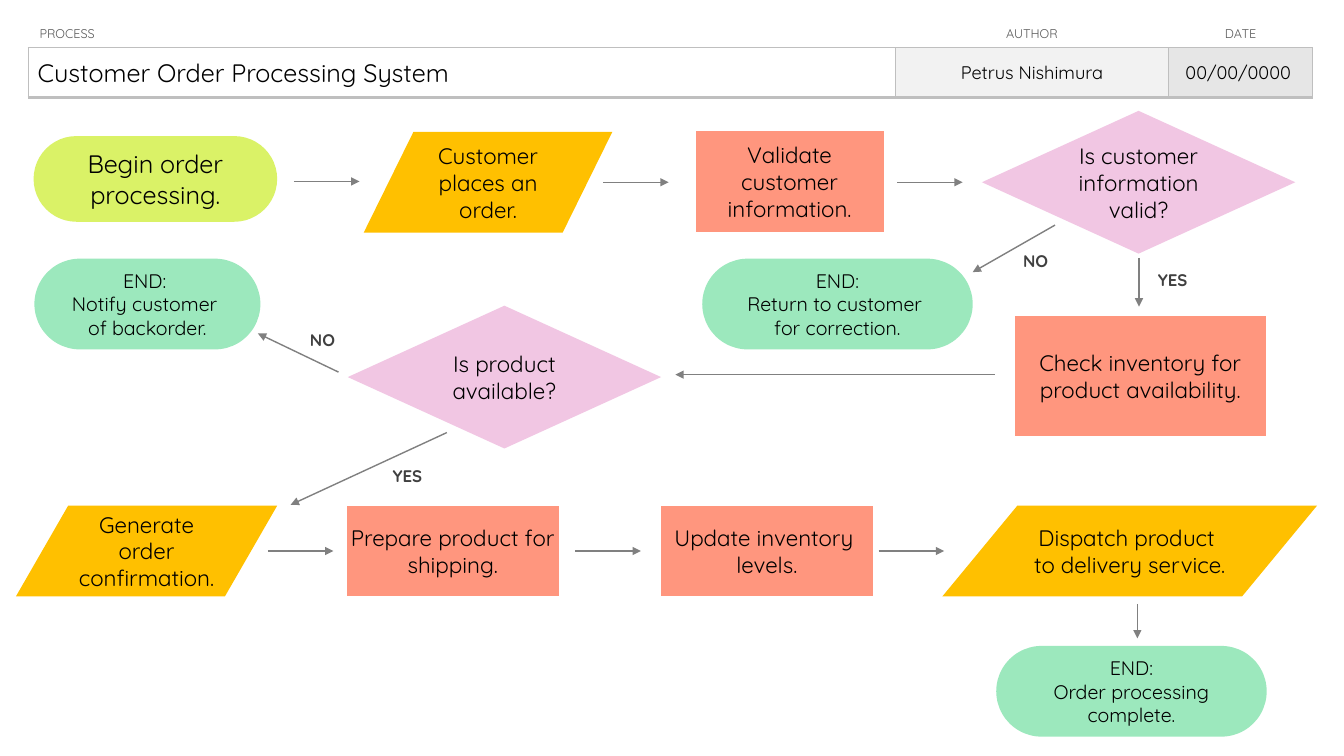
from lxml.etree import SubElement
from pptx import Presentation
from pptx.dml.color import RGBColor
from pptx.enum.shapes import MSO_CONNECTOR as Link, MSO_SHAPE as Shape
from pptx.enum.text import MSO_ANCHOR as Anchor, PP_ALIGN as Align
from pptx.oxml.ns import qn
from pptx.util import Inches, Pt

BLACK = RGBColor(0x00, 0x00, 0x00)
WHITE = RGBColor(0xFF, 0xFF, 0xFF)
HEADING = RGBColor(0x59, 0x59, 0x59)
LABEL = RGBColor(0x40, 0x40, 0x40)
ARROW = RGBColor(0x80, 0x80, 0x80)
BORDER = RGBColor(0xBF, 0xBF, 0xBF)
AUTHOR_FILL = RGBColor(0xF2, 0xF2, 0xF2)
DATE_FILL = RGBColor(0xE6, 0xE6, 0xE6)
LIME = RGBColor(0xDA, 0xF2, 0x67)
MINT = RGBColor(0x9C, 0xE8, 0xBD)
AMBER = RGBColor(0xFF, 0xC0, 0x00)
CORAL = RGBColor(0xFF, 0x96, 0x7E)
PINK = RGBColor(0xF1, 0xC6, 0xE3)

deck = Presentation()
deck.slide_width, deck.slide_height = Inches(13.333), Inches(7.5)
page = deck.slides.add_slide(deck.slide_layouts[6])
UNIT = deck.slide_width / 160


def grid(*cells):
    return [round(cell * UNIT) for cell in cells]


def write(frame, lines, size, color=BLACK, bold=False, align=Align.CENTER):
    for number, line in enumerate(lines):
        para = frame.paragraphs[0] if number == 0 else frame.add_paragraph()
        para.alignment = align
        span = para.add_run()
        span.text = line
        span.font.color.rgb = color
        look = {"name": "Quicksand", "size": Pt(size), "bold": bold}
        for name, value in look.items():
            setattr(span.font, name, value)


header = page.shapes.add_table(2, 3, *grid(3.4, 2.3, 152.9, 9.3)).table
for flag in ("first_row", "horz_banding"):
    setattr(header, flag, False)
for column, width in zip(header.columns, grid(103.2, 32.5, 17.2)):
    column.width = width
for row, height in zip(header.rows, grid(3.4, 5.9)):
    row.height = height

HEADER_CELLS = [
    (0, 0, "PROCESS", 9, HEADING, None, 0.11, Align.LEFT),
    (0, 1, "AUTHOR", 9, HEADING, None, 0.01, Align.CENTER),
    (0, 2, "DATE", 9, HEADING, None, 0.01, Align.CENTER),
    (1, 0, "Customer Order Processing System", 18, BLACK, WHITE, 0.09, Align.LEFT),
    (1, 1, "Petrus Nishimura", 13, BLACK, AUTHOR_FILL, 0.01, Align.CENTER),
    (1, 2, "00/00/0000 ", 13, BLACK, DATE_FILL, 0.01, Align.CENTER),
]
ROW_BORDERS = [
    {"a:lnB": 1},
    {"a:lnL": 1, "a:lnR": 1, "a:lnT": 1, "a:lnB": 2.25},
]
for row, column, text, size, color, fill, indent, align in HEADER_CELLS:
    cell = header.cell(row, column)
    layout = {
        "margin_left": Inches(indent), "margin_top": Inches(0.01),
        "margin_right": Inches(0.01), "margin_bottom": 0,
        "vertical_anchor": Anchor.MIDDLE,
    }
    for name, value in layout.items():
        setattr(cell, name, value)
    write(cell.text_frame, [text], size, color, align=align)
    for side, weight in ROW_BORDERS[row].items():
        edge = SubElement(cell._tc.get_or_add_tcPr(), qn(side), w=str(Pt(weight)))
        paint = SubElement(edge, qn("a:solidFill"))
        SubElement(paint, qn("a:srgbClr"), val=str(BORDER))
    if fill is None:
        cell.fill.background()
    else:
        cell.fill.solid()
        cell.fill.fore_color.rgb = fill

ROW_ARROWS = [(35, 21.6), (71.8, 21.7), (106.8, 21.7),
              (31.9, 65.6), (68.5, 65.6), (104.6, 65.6)]
ARROWS = [(left, level, left + 7.8, level) for left, level in ROW_ARROWS] + [
    (135.6, 30.7, 135.6, 36.5),
    (125.6, 26.8, 115.8, 32.4),
    (118.4, 44.6, 80.4, 44.6),
    (40.3, 44.3, 30.7, 39.7),
    (53.2, 51.5, 34.6, 60.1),
    (135.4, 71.9, 135.4, 76),
]
for ends in ARROWS:
    arrow = page.shapes.add_connector(Link.STRAIGHT, *grid(*ends))
    arrow.line.color.rgb = ARROW
    arrow.line.width = Pt(1)
    properties = arrow.element.spPr
    SubElement(properties.find(qn("a:ln")), qn("a:tailEnd"), type="triangle")
    SubElement(properties, qn("a:effectLst"))

START = (Shape.ROUNDED_RECTANGLE, LIME, 18, 0.02)
END = (Shape.ROUNDED_RECTANGLE, MINT, 14, 0.02)
DATA = (Shape.FLOWCHART_DATA, AMBER, 16, 0)
PROCESS = (Shape.FLOWCHART_PROCESS, CORAL, 16, 0.02)
DECISION = (Shape.FLOWCHART_DECISION, PINK, 16, 0)
NOTE = (None, None, 12, 0.02)
STEPS = [
    (START, (4, 16.2, 29, 10.2), ["Begin order processing."]),
    (DATA, (43.3, 15.7, 29.6, 12), ["Customer places an order."]),
    (PROCESS, (82.8, 15.6, 22.4, 12), ["Validate customer information."]),
    (DECISION, (116.9, 13.2, 37.3, 17), ["Is customer information valid?"]),
    (END, (83.6, 30.8, 32.2, 10.8), ["END:", "Return to customer ", "for correction."]),
    (PROCESS, (120.8, 37.6, 29.9, 14.3), ["Check inventory for product availability."]),
    (DECISION, (41.4, 36.4, 37.3, 17), ["Is product available?"]),
    (END, (4.1, 30.8, 26.9, 10.8), ["END: ", "Notify customer ", "of backorder."]),
    (DATA, (1.9, 60.2, 31.1, 10.8), ["Generate order confirmation."]),
    (PROCESS, (41.3, 60.2, 25.2, 10.8), ["Prepare product for shipping."]),
    (PROCESS, (78.7, 60.2, 25.2, 10.8), ["Update inventory ", "levels."]),
    (DATA, (112.2, 60.2, 44.6, 10.8), ["Dispatch product ", "to delivery service."]),
    (END, (118.6, 76.9, 32.2, 10.8), ["END:", "Order processing complete."]),
    (NOTE, (118.4, 28.4, 9.8, 5.2), ["NO"]),
    (NOTE, (136.2, 30.7, 6.8, 5.2), ["YES"]),
    (NOTE, (33.5, 37.9, 9.8, 5.2), ["NO"]),
    (NOTE, (45.1, 54, 6.8, 5.2), ["YES"]),
]
for (kind, fill, size, inset), place, lines in STEPS:
    if kind is None:
        box = page.shapes.add_textbox(*grid(*place))
    else:
        box = page.shapes.add_shape(kind, *grid(*place))
        box.shadow.inherit = False
        box.fill.solid()
        box.fill.fore_color.rgb = fill
        box.line.fill.background()
        if kind == Shape.ROUNDED_RECTANGLE:
            box.adjustments[0] = 0.5
    layout = {"word_wrap": True, "vertical_anchor": Anchor.MIDDLE}
    for side in ("left", "top", "right", "bottom"):
        layout["margin_" + side] = Inches(inset)
    for name, value in layout.items():
        setattr(box.text_frame, name, value)
    note = kind is None
    write(box.text_frame, lines, size, LABEL if note else BLACK, note)

deck.save("out.pptx")
